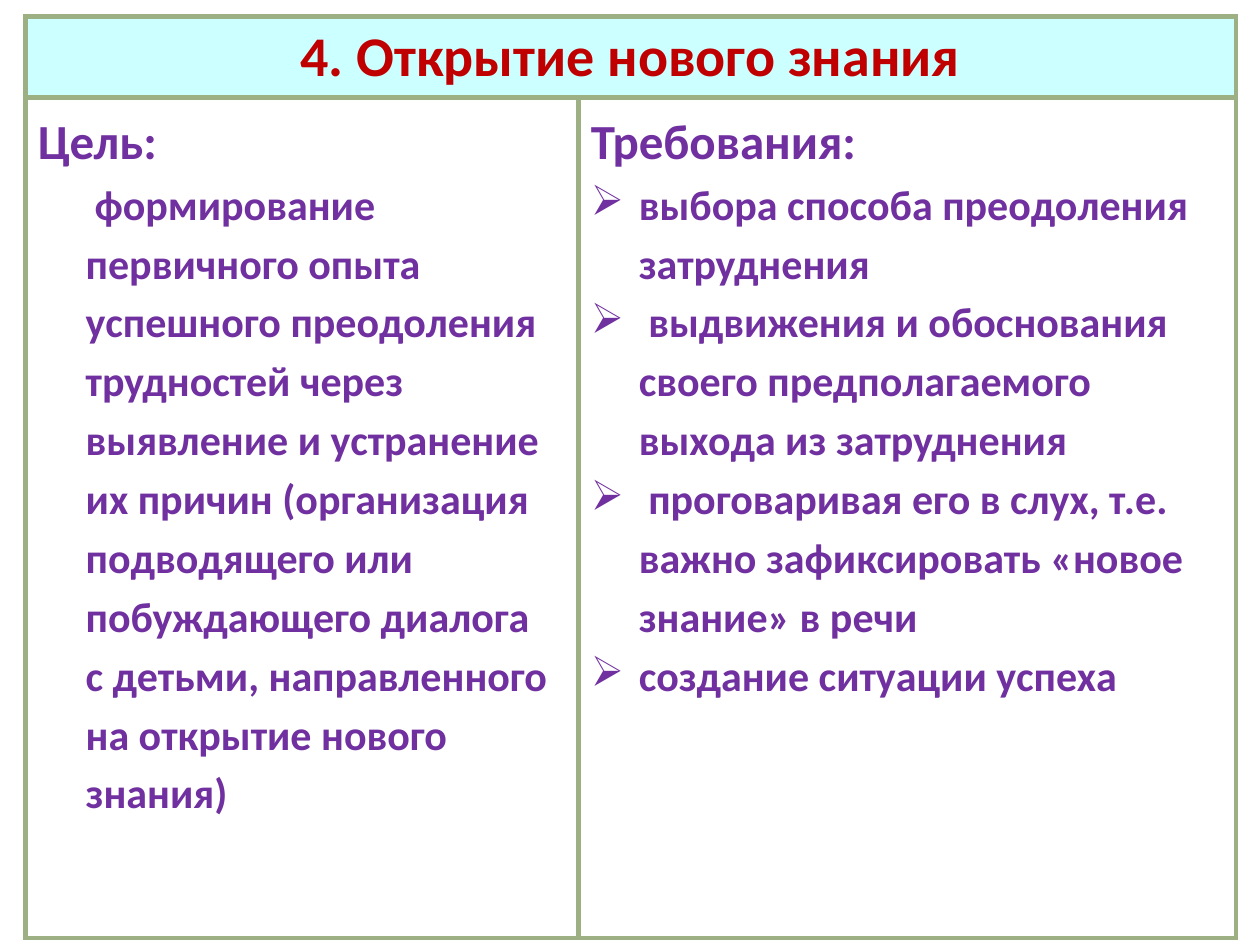
from dataclasses import dataclass

from lxml import etree
from pptx import Presentation
from pptx.dml.color import RGBColor
from pptx.enum.text import MSO_ANCHOR, PP_ALIGN
from pptx.oxml.ns import qn
from pptx.util import Inches, Pt

CENTER = PP_ALIGN.CENTER
MIDDLE = MSO_ANCHOR.MIDDLE
BLANK = 6


@dataclass(frozen=True)
class Theme:
    font: str = "Calibri"
    title: str = "C00000"
    text: str = "7030A0"
    band: str = "CCFFFF"
    edge: str = "9CB084"
    line: float = 3
    big: int = 32
    head: int = 28
    body: int = 24
    hang: float = 0.38
    lead: float = 1.15


THEME = Theme()
COLS = (4.39, 5.22)
ROWS = (0.64, 6.67)
LEFT, TOP = 0.2, 0.13

TITLE = "4. Открытие нового знания"
GOAL = (
    "формирование первичного опыта успешного преодоления трудностей через "
    "выявление и устранение их причин (организация подводящего или "
    "побуждающего диалога  с детьми, направленного на открытие нового знания)"
)
NEEDS = (
    "выбора способа преодоления затруднения",
    " выдвижения и обоснования своего предполагаемого выхода из затруднения",
    " проговаривая его в слух, т.е.  важно зафиксировать «новое знание» в речи",
    "создание ситуации успеха",
)


def set_font(para, size, color):
    font = para.font
    font.name, font.size, font.bold = THEME.font, Pt(size), True
    font.color.rgb = RGBColor.from_string(color)


def set_edges(cell):
    props = cell._tc.get_or_add_tcPr()
    for side in ("a:lnL", "a:lnR", "a:lnT", "a:lnB"):
        line = etree.SubElement(props, qn(side), w=str(Pt(THEME.line)))
        fill = etree.SubElement(line, qn("a:solidFill"))
        etree.SubElement(fill, qn("a:srgbClr"), val=THEME.edge)


def set_indent(para, first, bullet=None):
    """Indent the paragraph; first is the first line's offset from the rest."""
    props = para._p.get_or_add_pPr()
    props.set("marL", str(Inches(THEME.hang)))
    props.set("indent", str(Inches(first)))
    if bullet:
        etree.SubElement(props, qn("a:buChar"), char=bullet)


def add_text(frame, text, size, first=-THEME.hang, bullet=None):
    para = frame.paragraphs[0] if not frame.text else frame.add_paragraph()
    para.text = text
    para.line_spacing = THEME.lead
    set_indent(para, first, bullet)
    set_font(para, THEME.text, size) if isinstance(size, str) else set_font(
        para, size, THEME.text
    )


def add_grid(slide):
    frame = slide.shapes.add_table(
        len(ROWS), len(COLS), Inches(LEFT), Inches(TOP),
        Inches(sum(COLS)), Inches(sum(ROWS)),
    )
    table = frame.table
    table.first_row = table.horz_banding = False
    for col, width in zip(table.columns, COLS):
        col.width = Inches(width)
    for row, height in zip(table.rows, ROWS):
        row.height = Inches(height)
    for cell in table.iter_cells():
        set_edges(cell)
        cell.fill.background()
    return table


def fill_title(table):
    cell = table.cell(0, 0)
    cell.merge(table.cell(0, len(COLS) - 1))
    cell.fill.solid()
    cell.fill.fore_color.rgb = RGBColor.from_string(THEME.band)
    cell.vertical_anchor = MIDDLE
    para = cell.text_frame.paragraphs[0]
    para.text, para.alignment = TITLE, CENTER
    set_font(para, THEME.big, THEME.title)


def main():
    deck = Presentation()
    deck.slide_width, deck.slide_height = Inches(10), Inches(7.5)
    slide = deck.slides.add_slide(deck.slide_layouts[BLANK])

    table = add_grid(slide)
    fill_title(table)
    goal, needs = (table.cell(1, col).text_frame for col in range(len(COLS)))
    add_text(goal, "Цель:", THEME.head)
    add_text(goal, GOAL, THEME.body, first=0.07)
    add_text(needs, "Требования:", THEME.head)
    for need in NEEDS:
        add_text(needs, need, THEME.body, bullet="➢")

    deck.save("out.pptx")


if __name__ == "__main__":
    main()
